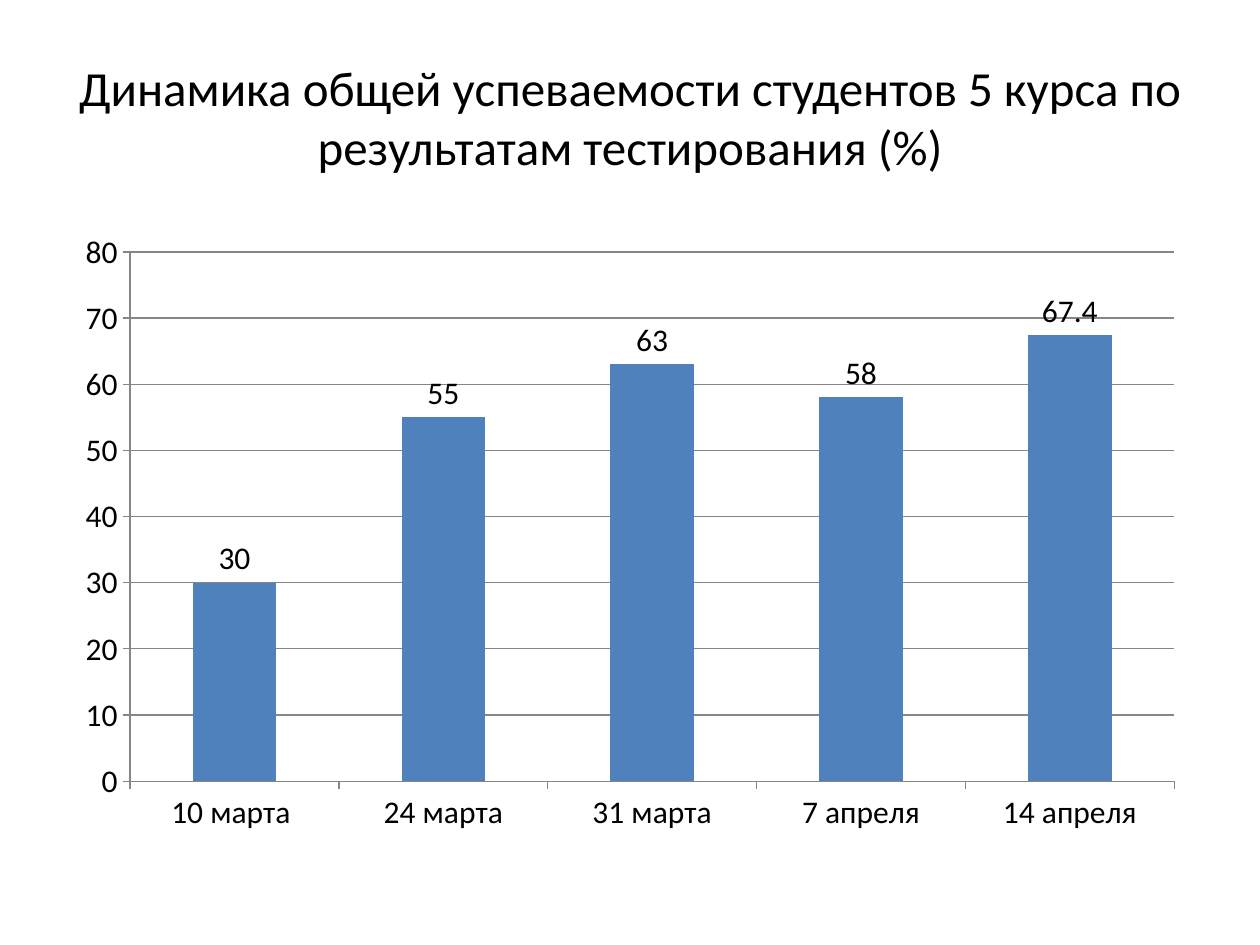
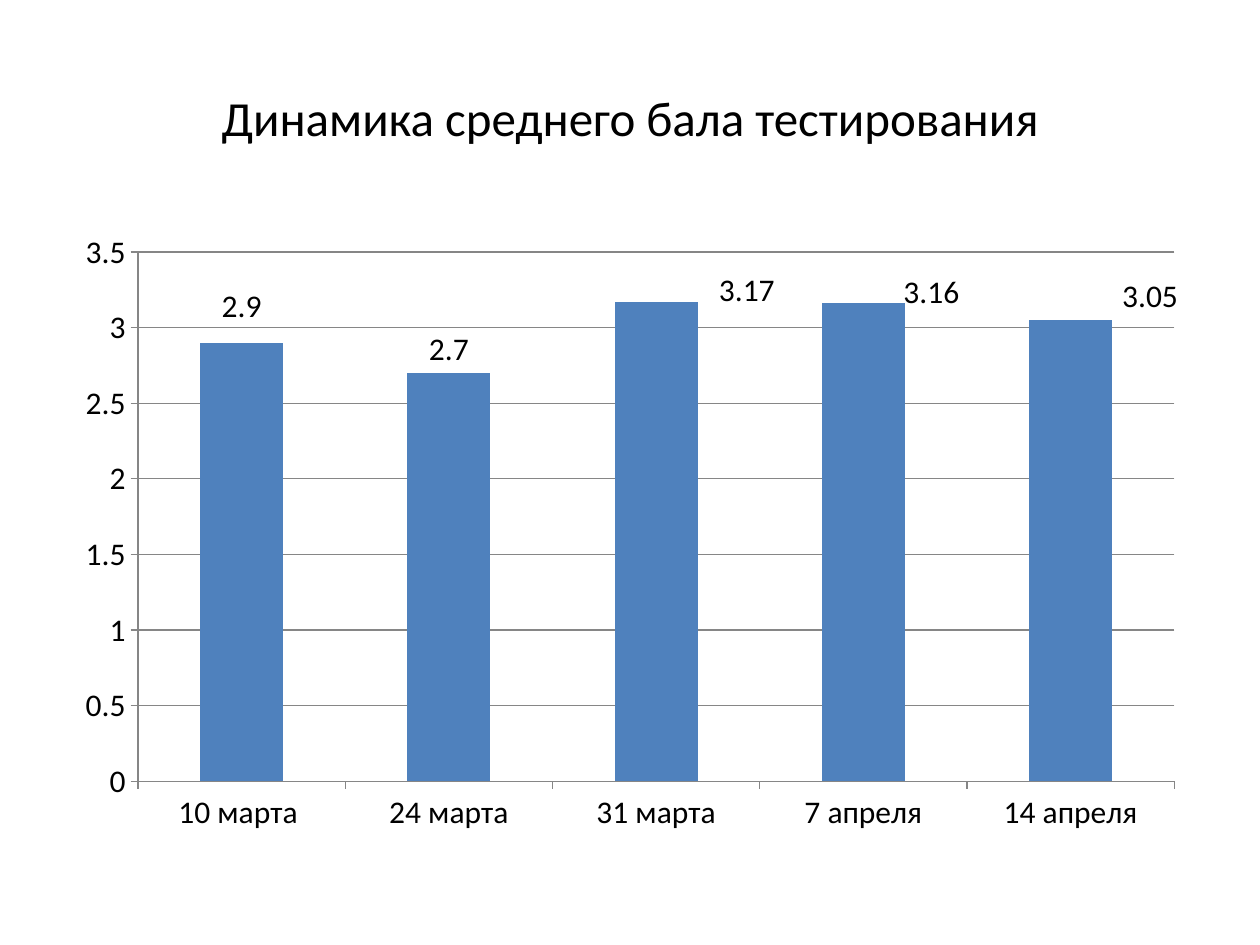
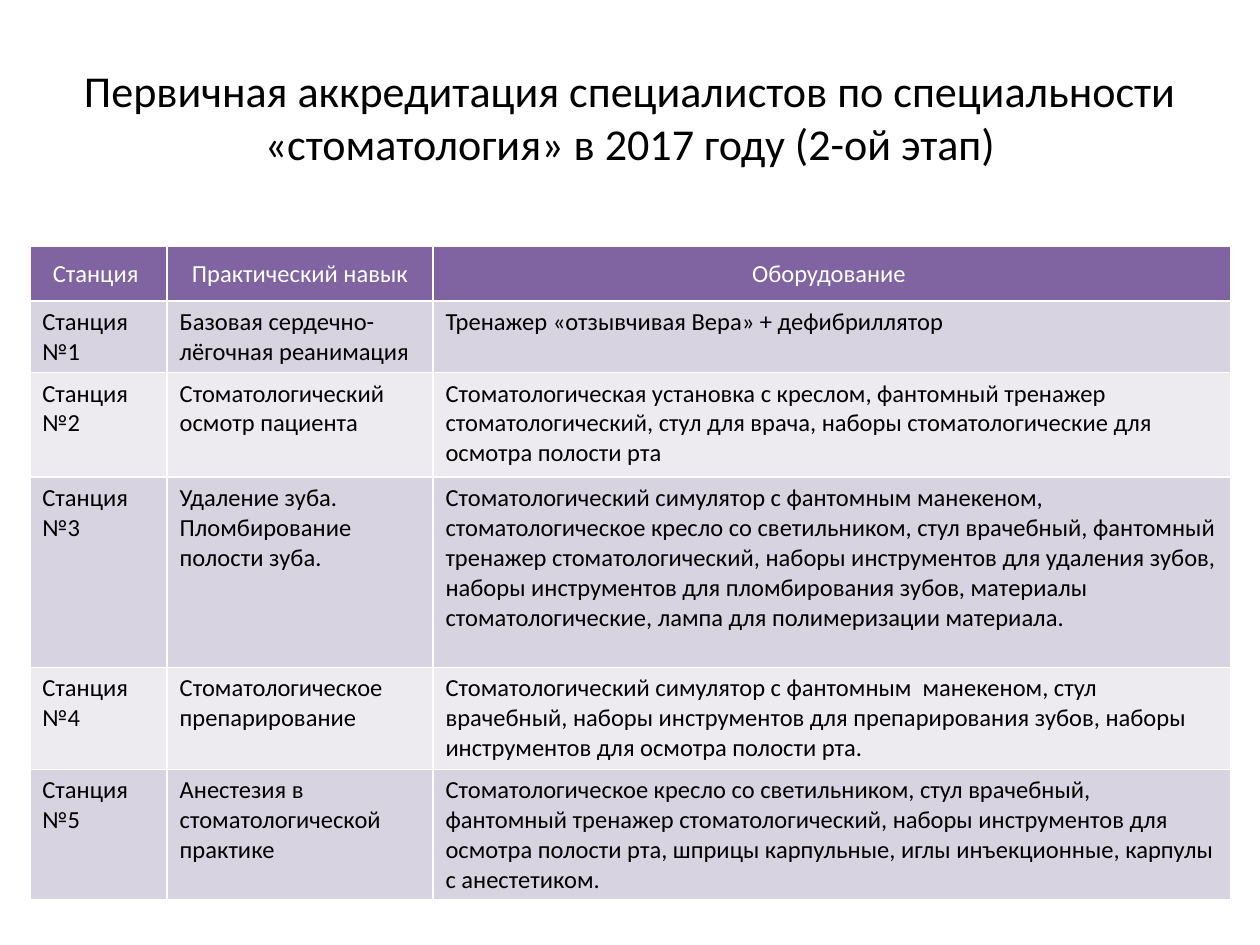
from lxml import etree
from pptx import Presentation
from pptx.chart.data import CategoryChartData
from pptx.dml.color import RGBColor
from pptx.enum import chart as ch, text
from pptx.oxml import ns
from pptx.util import Pt

FONT = "Calibri"
BLACK, WHITE, GREY = "000000", "FFFFFF", "868686"
BAR, HEAD, BANDS = "4F81BD", "8064A2", ("D8D3E0", "EDEAF0")
TITLE_BOX = (36, 21.6, 648, 90)
CHART_BOX = (36, 126, 648, 356.4)
TABLE_BOX = (17, 141, 686.2, 360)
COL_WIDTHS = (78.5, 151.9, 455.8)
ROW_HEIGHTS = (30.9, 41, 59.8, 108.7, 58.3, 61.3)
DATES = ("10 марта ", "24 марта", "31 марта", "7 апреля", "14 апреля")
CHARTS = (
    ("Динамика общей успеваемости студентов 5 курса по результатам тестирования (%)",
     (30, 55, 63, 58, 67.4), {}),
    ("Динамика среднего бала тестирования",
     (2.9, 2.7, 3.17, 3.16, 3.05),
     {0: (0, -0.02), 2: (0.08, 0.02), 3: (0.06, 0.02), 4: (0.07, 0)}),
)
STATIONS_TITLE = "Первичная аккредитация специалистов по специальности «стоматология» в 2017 году (2-ой этап)"
STATIONS = (
    ("Станция ", "Практический навык", "Оборудование "),
    ("Станция №1", "Базовая сердечно-лёгочная реанимация",
     "Тренажер «отзывчивая Вера» + дефибриллятор"),
    ("Станция №2", "Стоматологический осмотр пациента",
     "Стоматологическая установка с креслом, фантомный тренажер стоматологический, "
     "стул для врача, наборы стоматологические для осмотра полости рта"),
    ("Станция №3", "Удаление зуба. Пломбирование полости зуба.",
     "Стоматологический симулятор с фантомным манекеном, стоматологическое кресло "
     "со светильником, стул врачебный, фантомный тренажер стоматологический, наборы "
     "инструментов для удаления зубов, наборы инструментов для пломбирования зубов, "
     "материалы стоматологические, лампа для полимеризации материала."),
    ("Станция №4", "Стоматологическое препарирование",
     "Стоматологический симулятор с фантомным  манекеном, стул врачебный, наборы "
     "инструментов для препарирования зубов, наборы инструментов для осмотра полости рта."),
    ("Станция №5", "Анестезия в стоматологической практике",
     "Стоматологическое кресло со светильником, стул врачебный, фантомный тренажер "
     "стоматологический, наборы инструментов для осмотра полости рта, шприцы "
     "карпульные, иглы инъекционные, карпулы с анестетиком."),
)


def rgb(value):
    """Turn a hex string into a colour."""
    return RGBColor.from_string(value)


def set_font(font, size, color):
    """Apply the deck's typeface with a size and colour."""
    font.name, font.size, font.bold = FONT, Pt(size), False
    font.color.rgb = rgb(color)


def add_title(s, box, wording, size=28):
    """Place a centred slide title in the box."""
    tf = s.shapes.add_textbox(*map(Pt, box)).text_frame
    tf.word_wrap = True
    tf.vertical_anchor = text.MSO_ANCHOR.MIDDLE
    p = tf.paragraphs[0]
    p.text, p.alignment = wording, text.PP_ALIGN.CENTER
    set_font(p.font, size, BLACK)


def shift_label(series, index, dx, dy):
    """Move one data label by fractions of the chart's size."""
    series.points[index].data_label.position = ch.XL_LABEL_POSITION.OUTSIDE_END
    label = series._element.xpath(f"c:dLbls/c:dLbl[c:idx/@val='{index}']")[0]
    layout = etree.Element(ns.qn("c:layout"))
    manual = etree.SubElement(layout, ns.qn("c:manualLayout"))
    for axis, offset in (("x", dx), ("y", dy)):
        etree.SubElement(manual, ns.qn(f"c:{axis}"), val=str(offset))
    label.insert(1, layout)


def add_columns(s, box, values, shifts):
    """Draw the column chart of results by date in the box."""
    data = CategoryChartData()
    data.categories = DATES
    data.add_series("Series 1", values)
    chart = s.shapes.add_chart(
        ch.XL_CHART_TYPE.COLUMN_CLUSTERED, *map(Pt, box), data).chart
    chart.has_legend = chart.has_title = False
    set_font(chart.font, 18, BLACK)
    for axis in (chart.category_axis, chart.value_axis):
        axis.major_tick_mark = ch.XL_TICK_MARK.OUTSIDE
        axis.format.line.color.rgb = rgb(GREY)
    chart.value_axis.minimum_scale = 0
    chart.value_axis.major_gridlines.format.line.color.rgb = rgb(GREY)
    plot = chart.plots[0]
    plot.vary_by_categories, plot.gap_width = False, 150
    series = plot.series[0]
    series.format.fill.solid()
    series.format.fill.fore_color.rgb = rgb(BAR)
    series.data_labels.show_value = True
    for leader in series._element.xpath("c:dLbls/c:showLeaderLines"):
        leader.set("val", "0")
    for index, shift in shifts.items():
        shift_label(series, index, *shift)


def set_borders(cell):
    """Give a cell thin white borders."""
    props = cell._tc.get_or_add_tcPr()
    for i, side in enumerate("LRTB"):
        line = etree.Element(ns.qn(f"a:ln{side}"), w=str(Pt(1)))
        fill = etree.SubElement(line, ns.qn("a:solidFill"))
        etree.SubElement(fill, ns.qn("a:srgbClr"), val=WHITE)
        props.insert(i, line)


def fill_cell(cell, wording, row):
    """Write and style one cell as header or banded body."""
    header = row == 0
    cell.fill.solid()
    cell.fill.fore_color.rgb = rgb(HEAD if header else BANDS[(row - 1) % 2])
    set_borders(cell)
    p = cell.text_frame.paragraphs[0]
    p.text = wording
    set_font(p.font, 14, WHITE if header else BLACK)
    if header:
        p.alignment = text.PP_ALIGN.CENTER
        cell.vertical_anchor = text.MSO_ANCHOR.MIDDLE


def add_stations(s, box, rows):
    """Lay out the table of stations in the box."""
    table = s.shapes.add_table(len(rows), len(rows[0]), *map(Pt, box)).table
    for column, width in zip(table.columns, COL_WIDTHS):
        column.width = Pt(width)
    for row, height in zip(table.rows, ROW_HEIGHTS):
        row.height = Pt(height)
    for r, row in enumerate(rows):
        for c, wording in enumerate(row):
            fill_cell(table.cell(r, c), wording, r)


def main():
    """Build the three slides and save them."""
    prs = Presentation()
    prs.slide_width, prs.slide_height = Pt(720), Pt(540)
    blank = prs.slide_layouts[6]
    for title, values, shifts in CHARTS:
        s = prs.slides.add_slide(blank)
        add_title(s, TITLE_BOX, title)
        add_columns(s, CHART_BOX, values, shifts)
    s = prs.slides.add_slide(blank)
    add_title(s, TITLE_BOX, STATIONS_TITLE, 25.2)
    add_stations(s, TABLE_BOX, STATIONS)
    prs.save("out.pptx")


if __name__ == "__main__":
    main()
